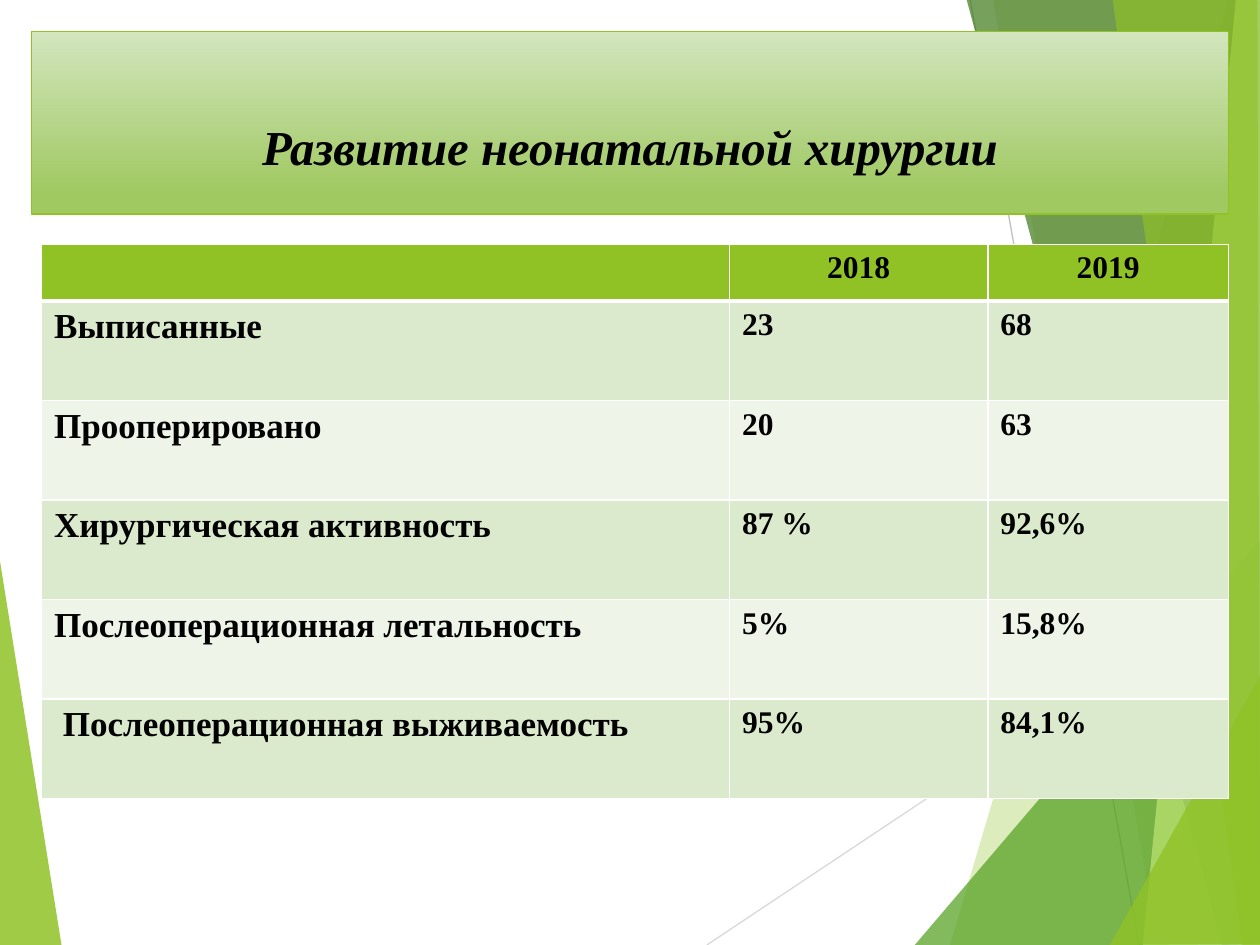
from dataclasses import dataclass
from pptx import Presentation
from pptx.dml.color import RGBColor as Rgb
from pptx.enum.shapes import MSO_CONNECTOR as Conn, MSO_SHAPE as Kind
from pptx.enum.text import MSO_ANCHOR as Anchor, PP_ALIGN as Align
from pptx.oxml.ns import qn
from pptx.util import Inches, Pt
from lxml.etree import SubElement as Sub

HUES = {
    "lime": "90C226", "green": "54A021", "dark": "3F7819", "pale": "C0E474",
    "light": "D3E5BE", "deep": "A0C962", "odd": "DBE9CD", "even": "EEF4E8",
    "white": "FFFFFF", "black": "000000", "ray": "D9D9D9", "beam": "BFBFBF",
}
FONT = "Times New Roman"


@dataclass
class Facet:
    hue: str
    alpha: int
    points: list[tuple[float, float]]


@dataclass
class Ray:
    hue: str
    start: tuple[float, float]
    end: tuple[float, float]


DECOR = [
    Facet("lime", 85, [(-0.01, 4.39), (0.49, 7.51), (-0.01, 7.5)]),
    Ray("ray", (5.61, 7.5), (10.01, 4.57)),
    Ray("beam", (7.7, 0), (9.04, 7.5)),
    Facet("lime", 30, [(9.75, 0), (7.54, 7.5), (10.02, 7.51), (10.01, 0.01)]),
    Facet("lime", 20, [(7.88, -0.01), (9.19, 7.5), (10.01, 7.5), (10.01, -0.01)]),
    Facet("green", 72, [(7.26, 7.5), (10, 4.29), (10.01, 7.5)]),
    Facet("dark", 70, [(7.67, -0.01), (9.7, 7.5), (10.01, 7.49), (10.01, -0.01)]),
    Facet("pale", 70, [(9.81, -0.01), (9.07, 7.5), (10.01, 7.5), (10, -0.01)]),
    Facet("lime", 65, [(8.83, -0.01), (9.86, 7.5), (10, 7.5), (9.98, -0.01)]),
    Facet("lime", 80, [(8.81, 7.5), (10.01, 5.35), (10.01, 7.49)]),
]
ROWS = [
    ("", "2018", "2019"),
    ("Выписанные", "23", "68"),
    ("Прооперировано", "20", "63"),
    ("Хирургическая активность", "87 %", "92,6%"),
    ("Послеоперационная летальность", "5%", "15,8%"),
    (" Послеоперационная выживаемость", "95%", "84,1%"),
]
WIDTHS = [5.46, 2.05, 1.91]


def tint(name: str) -> Rgb:
    """Return the named colour."""
    return Rgb.from_string(HUES[name])


def draw_facet(shapes, facet: Facet) -> None:
    """Draw a translucent polygon."""
    first, *rest = [(Inches(x), Inches(y)) for x, y in facet.points]
    pen = shapes.build_freeform(*first, scale=1.0)
    pen.add_line_segments(rest, close=True)
    shape = pen.convert_to_shape()
    shape.shadow.inherit = False
    shape.fill.solid()
    shape.fill.fore_color.rgb = tint(facet.hue)
    shape.line.fill.background()
    color = shape._element.spPr.find(qn("a:solidFill"))[0]
    Sub(color, qn("a:alpha"), val=str(facet.alpha * 1000))


def draw_ray(shapes, ray: Ray) -> None:
    """Draw a thin background line."""
    ends = [Inches(v) for v in ray.start + ray.end]
    line = shapes.add_connector(Conn.STRAIGHT, *ends)
    line.line.color.rgb = tint(ray.hue)
    line.line.width = Pt(0.75)
    Sub(line._element.spPr, qn("a:effectLst"))


def style(para, size: float, align: Align) -> None:
    """Set the bold black type of a paragraph."""
    para.alignment = align
    font = para.font
    font.name, font.size, font.bold = FONT, Pt(size), True
    font.color.rgb = tint("black")


def draw_title(shapes, text: str) -> None:
    """Draw the gradient title band."""
    band = shapes.add_shape(Kind.RECTANGLE, Inches(0.25), Inches(0.25), Inches(9.5), Inches(1.45))
    band.shadow.inherit = False
    band.fill.gradient()
    band.fill.gradient_angle = 270
    for stop, hue, place in zip(band.fill.gradient_stops, ("light", "deep"), (0, 0.88)):
        stop.color.rgb = tint(hue)
        stop.position = place
    band.line.color.rgb = tint("lime")
    band.line.width = Pt(1)
    frame = band.text_frame
    frame.word_wrap = True
    frame.vertical_anchor = Anchor.MIDDLE
    frame.margin_top = Inches(0.42)
    para = frame.paragraphs[0]
    para.text = text
    style(para, 27.9, Align.CENTER)
    para.font.italic = True


def edge(cell, sides: dict[str, int]) -> None:
    """Add white cell borders with the given widths in points."""
    props = cell._tc.get_or_add_tcPr()
    for spot, (side, width) in enumerate(sides.items()):
        line = props.makeelement(qn(f"a:{side}"), {"w": str(Pt(width))})
        props.insert(spot, line)
        Sub(Sub(line, qn("a:solidFill")), qn("a:srgbClr"), val=HUES["white"])


def draw_table(shapes) -> None:
    """Draw the table of yearly figures."""
    frame = shapes.add_table(len(ROWS), len(WIDTHS), Inches(0.33), Inches(1.94), Inches(9.42), Inches(4.4))
    table = frame.table
    for col, width in zip(table.columns, WIDTHS):
        col.width = Inches(width)
    for i, texts in enumerate(ROWS):
        table.rows[i].height = Inches(0.79 if i else 0.45)
        hue = ("even" if i % 2 == 0 else "odd") if i else "lime"
        for j, text in enumerate(texts):
            cell = table.cell(i, j)
            cell.fill.solid()
            cell.fill.fore_color.rgb = tint(hue)
            edge(cell, {"lnL": 1, "lnR": 1, "lnT": 3 if i == 1 else 1, "lnB": 1 if i else 3})
            para = cell.text_frame.paragraphs[0]
            para.text = text
            style(para, 20 if i and j == 0 else 18, Align.LEFT if i else Align.CENTER)


def main() -> None:
    """Build and save the slide."""
    deck = Presentation()
    deck.slide_width, deck.slide_height = Inches(10), Inches(7.5)
    shapes = deck.slides.add_slide(deck.slide_layouts[6]).shapes
    for item in DECOR:
        if isinstance(item, Facet):
            draw_facet(shapes, item)
        else:
            draw_ray(shapes, item)
    draw_title(shapes, "Развитие неонатальной хирургии")
    draw_table(shapes)
    deck.save("out.pptx")


if __name__ == "__main__":
    main()
